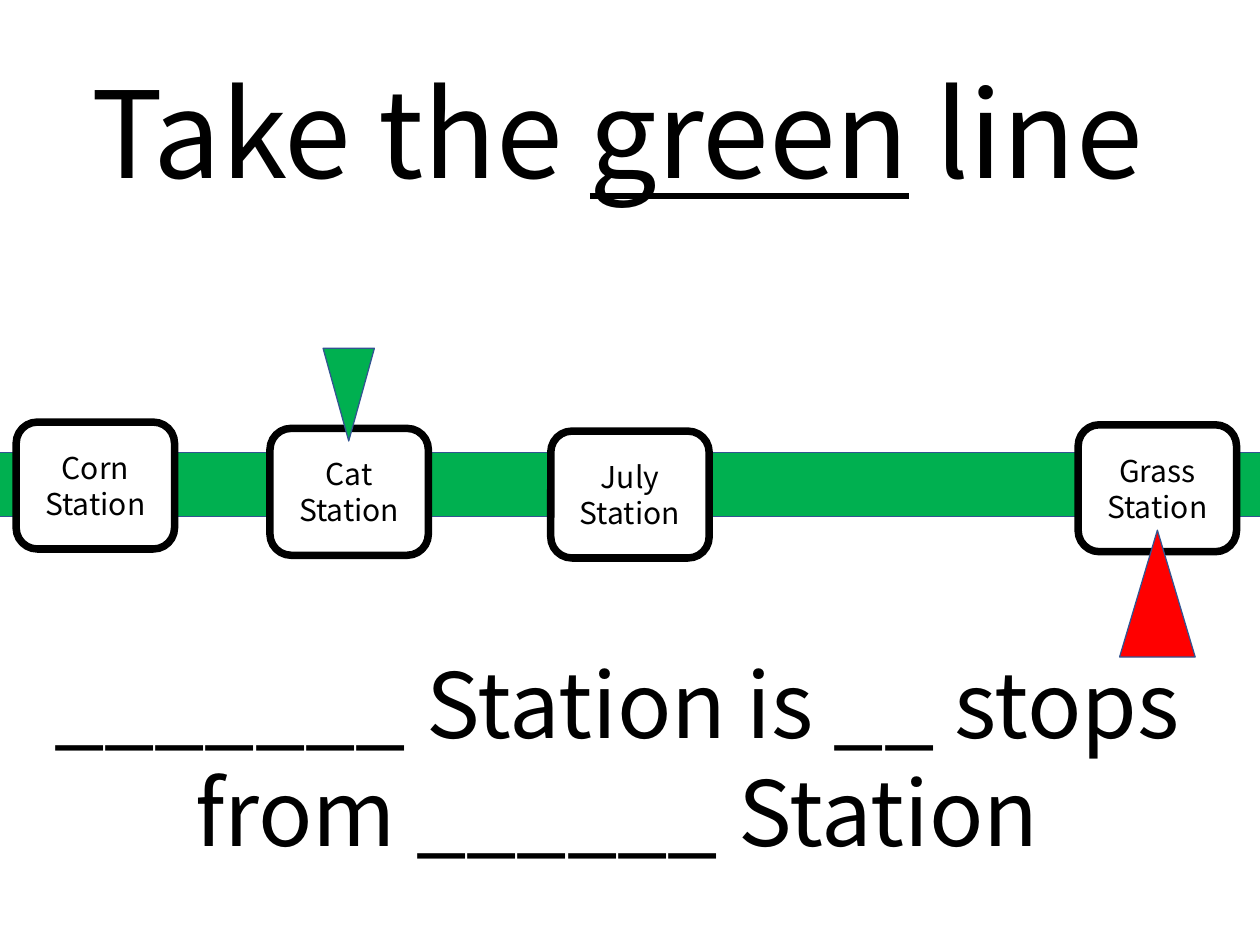
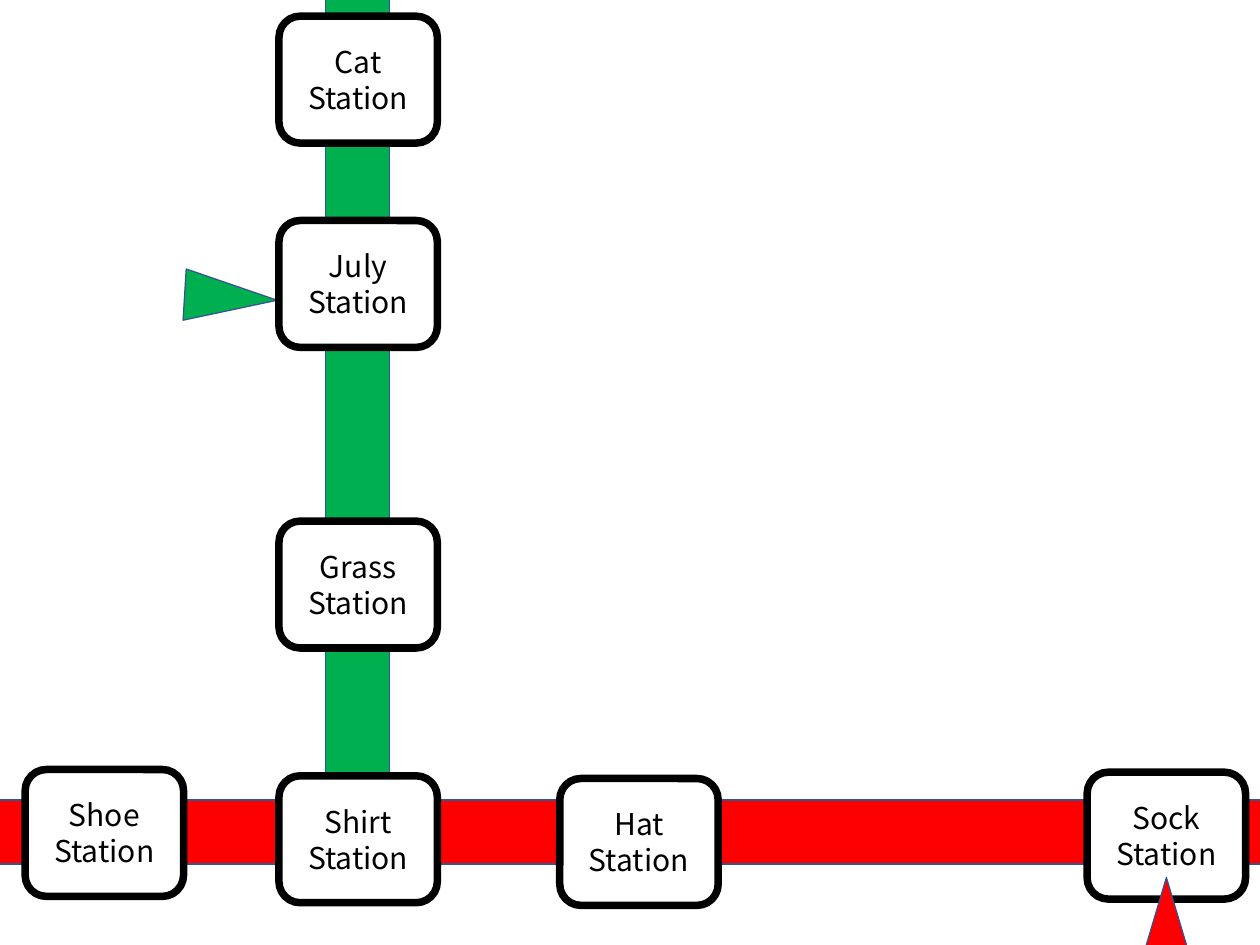
import pptx
import pptx.util
import pptx.dml.color
import pptx.enum.shapes
import pptx.enum.text
from dataclasses import dataclass

Inches, Pt = pptx.util.Inches, pptx.util.Pt
SHAPE = pptx.enum.shapes.MSO_SHAPE
ANCHOR = pptx.enum.text.MSO_ANCHOR


@dataclass(frozen=True)
class Theme:
    font: str = "Noto Sans CJK JP"
    green: str = "00B050"
    red: str = "FF0000"
    outline: str = "325491"
    black: str = "000000"
    white: str = "FFFFFF"
    title_size: int = 96
    body_size: int = 72
    station_size: int = 24


def rgb(value):
    return pptx.dml.color.RGBColor.from_string(value)


def write(tf, paragraphs, *, font, size, color, anchor=ANCHOR.TOP):
    """Fill a frame; each paragraph is a list of (text, underlined) runs."""
    tf.word_wrap = True
    tf.vertical_anchor = anchor
    for i, runs in enumerate(paragraphs):
        p = tf.paragraphs[0] if i == 0 else tf.add_paragraph()
        p.alignment = pptx.enum.text.PP_ALIGN.CENTER
        for text, underlined in runs:
            r = p.add_run()
            r.text = text
            r.font.name = font
            r.font.size = Pt(size)
            r.font.color.rgb = rgb(color)
            r.font.underline = underlined


class MetroDeck:
    BAR_LENGTH, BAR_WIDTH = 17.22, 0.71
    STATION_WIDTH, STATION_HEIGHT = 1.76, 1.41

    def __init__(self, theme):
        self.theme = theme
        self.prs = pptx.Presentation()
        self.prs.slide_width = Inches(14)
        self.prs.slide_height = Inches(10.5)
        self.s = None

    def new_slide(self):
        self.s = self.prs.slides.add_slide(self.prs.slide_layouts[6])

    def shape(self, kind, left, top, width, height, fill, line, weight, rotation=0):
        sp = self.s.shapes.add_shape(
            kind, Inches(left), Inches(top), Inches(width), Inches(height))
        sp.shadow.inherit = False
        sp.rotation = rotation
        sp.fill.solid()
        sp.fill.fore_color.rgb = rgb(fill)
        sp.line.color.rgb = rgb(line)
        sp.line.width = Pt(weight)
        return sp

    def track(self, left, top, color, rotation=0):
        self.shape(SHAPE.RECTANGLE, left, top, self.BAR_LENGTH, self.BAR_WIDTH,
                   color, self.theme.outline, 1, rotation)

    def station(self, name, left, top):
        t = self.theme
        sp = self.shape(SHAPE.ROUNDED_RECTANGLE, left, top, self.STATION_WIDTH,
                        self.STATION_HEIGHT, t.white, t.black, 6)
        write(sp.text_frame, [[(name, False)], [("Station", False)]], font=t.font,
              size=t.station_size, color=t.black, anchor=ANCHOR.MIDDLE)

    def start_marker(self, left, top, rotation):
        self.shape(SHAPE.ISOSCELES_TRIANGLE, left, top, 0.57, 1.03,
                   self.theme.green, self.theme.outline, 1, rotation)

    def end_marker(self, left, top):
        self.shape(SHAPE.ISOSCELES_TRIANGLE, left, top, 0.84, 1.41,
                   self.theme.red, self.theme.outline, 1)

    def sentence(self, runs, top, height, size):
        sp = self.s.shapes.add_textbox(
            Inches(0.18), Inches(top), Inches(13.35), Inches(height))
        write(sp.text_frame, [runs], font=self.theme.font, size=size,
              color=self.theme.black)

    def horizontal_line(self, names, left, top, color):
        """Draw a track with four stations, placed relative to the first one."""
        self.track(left - 1.94, top + 0.34, color)
        offsets = [(0, 0), (2.82, 0.07), (5.94, 0.1), (11.8, 0.03)]
        for name, (dx, dy) in zip(names, offsets):
            self.station(name, left + dx, top + dy)
        self.end_marker(left + 12.26, top + 1.2)


def green_line_slide(deck):
    t = deck.theme
    deck.new_slide()
    deck.horizontal_line(["Corn", "Cat", "July", "Grass"], 0.18, 4.69, t.green)
    deck.start_marker(3.59, 3.87, 180)
    deck.sentence([("Take the ", False), ("green", True), (" line", False)],
                  0.6, 3.33, t.title_size)
    deck.sentence([("_______ Station is __ stops from ______ Station", False)],
                  7.16, 2.52, t.body_size)


def transfer_slide(deck):
    t = deck.theme
    deck.new_slide()
    deck.track(-4.64, 0.97, t.green, rotation=90)
    deck.horizontal_line(["Shoe", "Shirt", "Hat", "Sock"], 0.28, 8.55, t.red)
    deck.start_marker(2.28, 2.79, 93.5)
    for name, top in [("Cat", 0.18), ("July", 2.45), ("Grass", 5.79)]:
        deck.station(name, 3.1, top)


def main():
    deck = MetroDeck(Theme())
    green_line_slide(deck)
    transfer_slide(deck)
    deck.prs.save("out.pptx")


if __name__ == "__main__":
    main()
